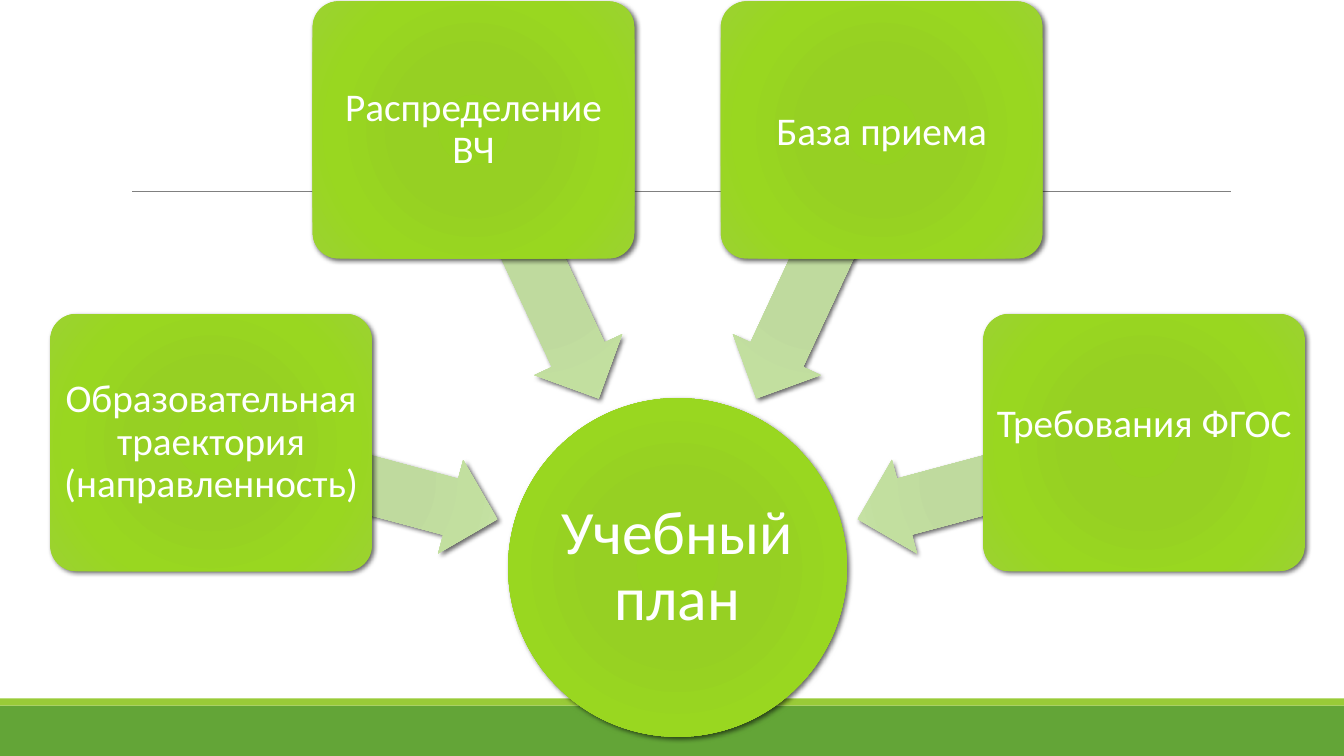
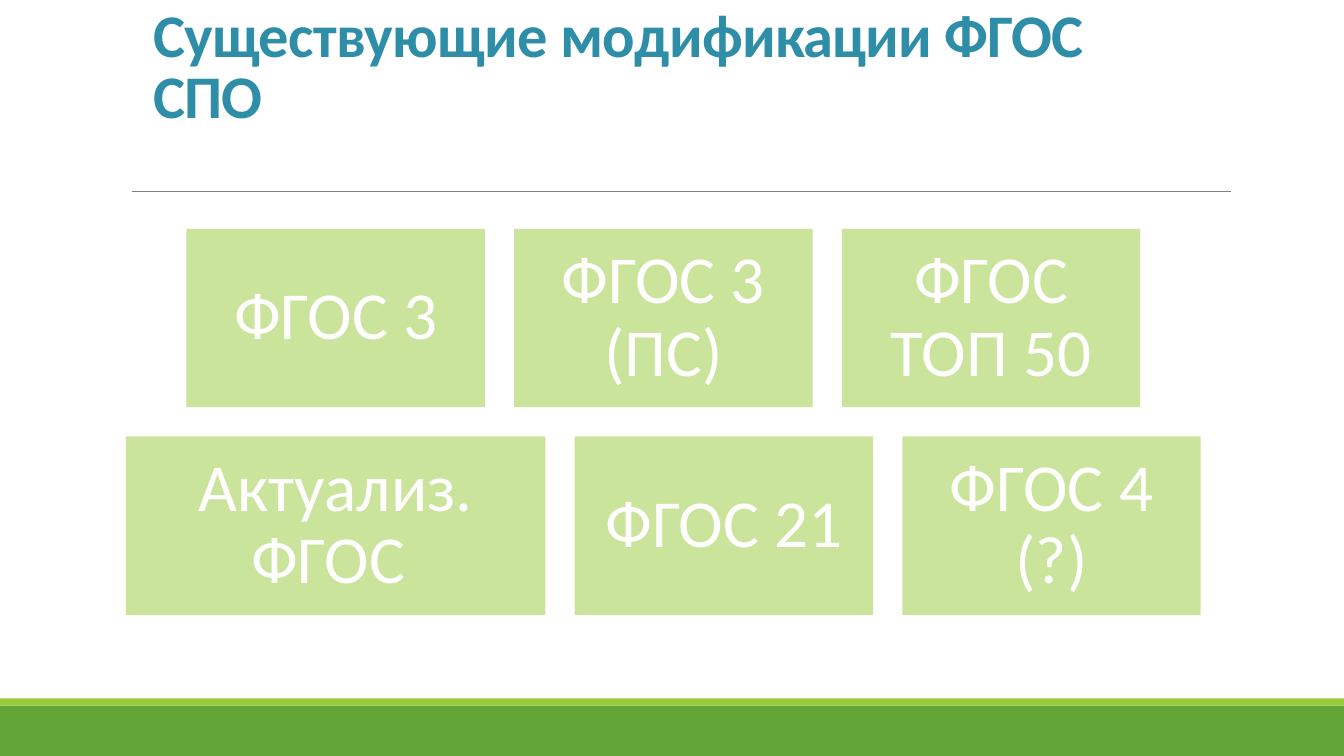
import math
from lxml import etree
from pptx import Presentation, util as u
from pptx.dml import color
from pptx.enum import shapes, text
from pptx.oxml import ns

FONT = "Calibri"
WHITE = "FFFFFF"
GREEN = "63A537"
LIME = "99CB38"
GREY = "808080"
TEAL = "2E8EA8"
CARD_STOPS = [(0, "95D220"), (34, "96D023"), (70, "99D720"), (100, "9BD231")]
ARROW_STOPS = [(0, "BDD99C"), (34, "BFDA9E"), (70, "C2DF9F"), (100, "CAE4AC")]
PAGE_WIDTH, PAGE_HEIGHT = 13.33, 7.5


def rgb(value):
    return color.RGBColor.from_string(value)


def add_child(parent, tag, **attributes):
    child = etree.SubElement(parent, ns.qn(tag))
    for name, value in attributes.items():
        child.set(name, str(value))
    return child


def add_box(page, kind, left, top, width, height, fill=LIME):
    box = page.shapes.add_shape(kind, *map(u.Inches, (left, top, width, height)))
    box.shadow.inherit = False
    box.fill.solid()
    box.fill.fore_color.rgb = rgb(fill)
    box.line.fill.background()
    return box


def add_centred_box(page, kind, centre, width, height):
    return add_box(page, kind, centre[0] - width / 2, centre[1] - height / 2, width, height)


def set_opacity(box, percent):
    fill = box.fill.fore_color
    srgb = box.element.spPr.find(ns.qn("a:solidFill") + "/" + ns.qn("a:srgbClr"))
    if fill.rgb is not None:
        add_child(srgb, "a:alpha", val=percent * 1000)


def style_raised(box, stops):
    properties = box.element.spPr
    solid = properties.find(ns.qn("a:solidFill"))
    gradient = etree.Element(ns.qn("a:gradFill"), rotWithShape="1")
    stop_list = add_child(gradient, "a:gsLst")
    for position, value in stops:
        stop = add_child(stop_list, "a:gs", pos=position * 1000)
        add_child(stop, "a:srgbClr", val=value)
    circle = add_child(gradient, "a:path", path="circle")
    add_child(circle, "a:fillToRect", l=100000, t=100000, r=100000, b=100000)
    properties.replace(solid, gradient)

    effects = properties.find(ns.qn("a:effectLst"))
    shadow = add_child(effects, "a:outerShdw", blurRad=u.Pt(3.5), dist=u.Pt(2),
                       dir=45 * 60000, algn="br", rotWithShape=0)
    add_child(add_child(shadow, "a:srgbClr", val="000000"), "a:alpha", val=60000)


def write_text(box, words, size, inset, spacing=0.9, fill=WHITE,
               align=text.PP_ALIGN.CENTER, anchor=text.MSO_ANCHOR.MIDDLE):
    frame = box.text_frame
    frame.word_wrap = True
    frame.vertical_anchor = anchor
    frame.margin_left = frame.margin_right = u.Inches(inset)
    frame.margin_top = frame.margin_bottom = u.Inches(inset)
    frame.text = words
    para = frame.paragraphs[0]
    para.alignment = align
    para.line_spacing = spacing
    span = para.runs[0]
    span.font.name = FONT
    span.font.size = u.Pt(size)
    span.font.color.rgb = rgb(fill)
    return span


def add_page(deck):
    page = deck.slides.add_slide(deck.slide_layouts[6])
    rect = shapes.MSO_SHAPE.RECTANGLE
    add_box(page, rect, 0, 7, PAGE_WIDTH, 0.5, GREEN)
    add_box(page, rect, 0, 6.93, PAGE_WIDTH, 0.07, LIME)
    ends = map(u.Inches, (1.31, 1.9, 12.21, 1.9))
    rule = page.shapes.add_connector(shapes.MSO_CONNECTOR.STRAIGHT, *ends)
    rule.line.color.rgb = rgb(GREY)
    rule.line.width = u.Pt(0.5)
    add_child(rule.element.spPr, "a:effectLst")
    return page


def add_title(page, words, left, top, width, height):
    box = page.shapes.add_textbox(*map(u.Inches, (left, top, width, height)))
    span = write_text(box, words, 43.2, 0.1, 0.85, TEAL,
                      text.PP_ALIGN.LEFT, text.MSO_ANCHOR.BOTTOM)
    box.text_frame.margin_bottom = u.Inches(0.05)
    span.font.bold = True
    span.font._element.set("spc", "-50")


def add_hub(page, centre, words, factors):
    hub = add_centred_box(page, shapes.MSO_SHAPE.OVAL, centre, 3.36, 3.36)
    style_raised(hub, CARD_STOPS)
    write_text(hub, words, 44, 0.03)

    for index, (label, spacing, lift) in enumerate(factors):
        angle = 195 + 50 * index
        across, down = math.cos(math.radians(angle)), math.sin(math.radians(angle))

        def place(radius):
            return centre[0] + radius * across, centre[1] + radius * down

        arrow = add_centred_box(page, shapes.MSO_SHAPE.LEFT_ARROW, place(3.32), 2.94, 0.96)
        arrow.adjustments[0], arrow.adjustments[1] = 0.6, 0.5
        arrow.rotation = angle
        style_raised(arrow, ARROW_STOPS)

        card = add_centred_box(page, shapes.MSO_SHAPE.ROUNDED_RECTANGLE, place(4.79), 3.19, 2.55)
        card.adjustments[0] = 0.1
        style_raised(card, CARD_STOPS)
        write_text(card, label, 28, 0.06, spacing)
        card.text_frame.margin_bottom = u.Inches(0.06 + lift)


def add_tile_rows(page, centre_x, top, rows, height=1.77, gap=0.29):
    for row_index, row in enumerate(rows):
        total = sum(width for _, width in row) + gap * (len(row) - 1)
        left = centre_x - total / 2
        for label, width in row:
            tile = add_box(page, shapes.MSO_SHAPE.RECTANGLE, left,
                           top + row_index * (height + gap), width, height)
            set_opacity(tile, 50)
            write_text(tile, label, 48, 0.2)
            left += width + gap


def main():
    deck = Presentation()
    deck.slide_width = u.Inches(PAGE_WIDTH)
    deck.slide_height = u.Inches(PAGE_HEIGHT)

    add_hub(add_page(deck), (6.72, 5.63), "Учебный план", [
        ("Образовательная траектория (направленность)", 0.9, 0),
        ("Распределение ВЧ", 0.9, 0),
        ("База приема", 1.0, 0),
        ("Требования ФГОС", 1.0, 0.42),
    ])

    page = add_page(deck)
    add_tile_rows(page, 6.58, 2.27, [
        [("ФГОС 3", 2.96), ("ФГОС 3 (ПС)", 2.96), ("ФГОС ТОП 50", 2.96)],
        [("Актуализ. ФГОС ", 4.16), ("ФГОС 21", 2.96), ("ФГОС 4 (?)", 2.96)],
    ])
    add_title(page, "Существующие модификации ФГОС СПО", 1.42, 0, 10.5, 1.35)
    deck.save("out.pptx")


if __name__ == "__main__":
    main()
